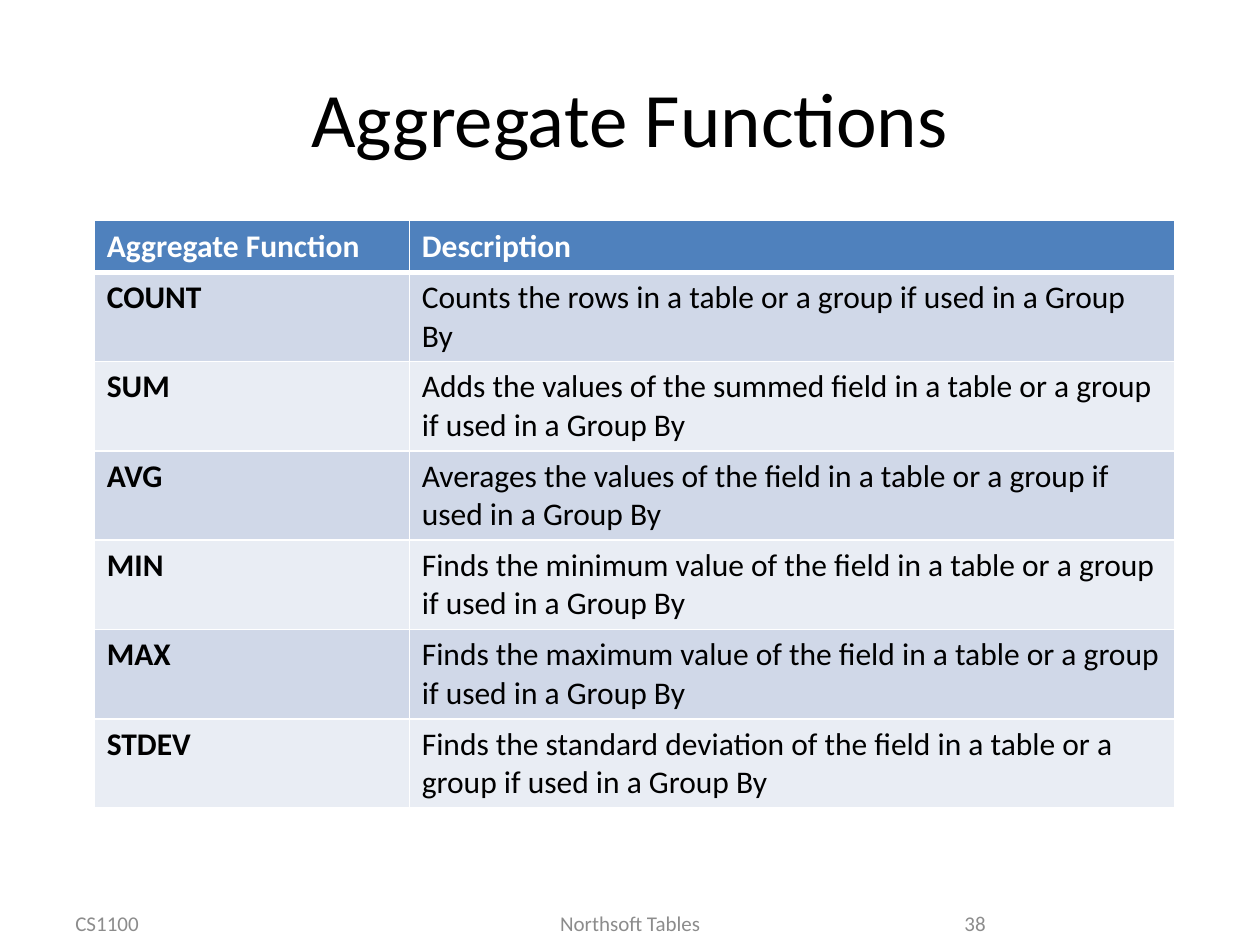
from lxml.etree import SubElement as Sub
from pptx import Presentation as Deck
from pptx.dml.color import RGBColor as Rgb
from pptx.enum.text import MSO_ANCHOR as Anchor, PP_ALIGN as Align
from pptx.oxml.ns import qn
from pptx.util import Cm, Pt

HUES = {
    "ink": "000000",
    "paper": "FFFFFF",
    "head": "4F81BD",
    "dark": "D0D8E8",
    "light": "E9EDF4",
    "foot": "8C8C8C",
}
FACE = "Calibri"
TAIL = "in a table or a group if used in a Group By"
ROWS = [
    ("Aggregate Function", "Description"),
    ("COUNT", "Counts the rows " + TAIL),
    ("SUM", "Adds the values of the summed field " + TAIL),
    ("AVG", "Averages the values of the field " + TAIL),
    ("MIN", "Finds the minimum value of the field " + TAIL),
    ("MAX", "Finds the maximum value of the field " + TAIL),
    ("STDEV", "Finds the standard deviation of the field " + TAIL),
]
FEET = [
    ("CS1100", 1.27, 5.92, Align.LEFT),
    ("Northsoft Tables", 8.68, 8.05, Align.CENTER),
    ("38", 18.2, 1.92, Align.RIGHT),
]


def hue(name):
    return Rgb.from_string(HUES[name])


def style(frame, size, tint, bold=False, align=Align.LEFT):
    para = frame.paragraphs[0]
    para.alignment = align
    for run in para.runs:
        run.font.name = FACE
        run.font.size = Pt(size)
        run.font.bold = bold
        run.font.color.rgb = hue(tint)


def add_text(slide, text, left, top, width, height, size, tint, align):
    box = slide.shapes.add_textbox(Cm(left), Cm(top), Cm(width), Cm(height))
    frame = box.text_frame
    frame.word_wrap = True
    frame.vertical_anchor = Anchor.MIDDLE
    frame.text = text
    style(frame, size, tint, align=align)


def add_edge(cell, side, width):
    props = cell._tc.get_or_add_tcPr()
    line = Sub(props, qn("a:ln" + side), w=str(Pt(width)))
    fill = Sub(line, qn("a:solidFill"))
    Sub(fill, qn("a:srgbClr"), val=HUES["paper"])


def fill_cell(cell, text, row, col):
    head = row == 0
    band = "head" if head else "dark" if row % 2 else "light"
    for side in "LRTB":
        thick = (row, side) in ((0, "B"), (1, "T"))
        add_edge(cell, side, 3 if thick else 1)
    cell.fill.solid()
    cell.fill.fore_color.rgb = hue(band)
    cell.text_frame.text = text
    style(cell.text_frame, 18, "paper" if head else "ink", head or col == 0)


def add_grid(slide):
    frame = slide.shapes.add_table(
        len(ROWS), 2, Cm(1.9), Cm(4.45), Cm(21.79), Cm(11.84))
    table = frame.table
    for col, width in zip(table.columns, (6.35, 15.44)):
        col.width = Cm(width)
    for i, texts in enumerate(ROWS):
        table.rows[i].height = Cm(1.8 if i else 1.04)
        for j, text in enumerate(texts):
            fill_cell(table.cell(i, j), text, i, j)


def main():
    deck = Deck()
    deck.slide_width, deck.slide_height = Cm(25.4), Cm(19.05)
    slide = deck.slides.add_slide(deck.slide_layouts[6])
    add_text(slide, "Aggregate Functions", 1.27, 0.76, 22.86, 3.18,
             44, "ink", Align.CENTER)
    add_grid(slide)
    for text, left, width, align in FEET:
        add_text(slide, text, left, 18.21, width, 0.79, 12, "foot", align)
    deck.save("out.pptx")


if __name__ == "__main__":
    main()
